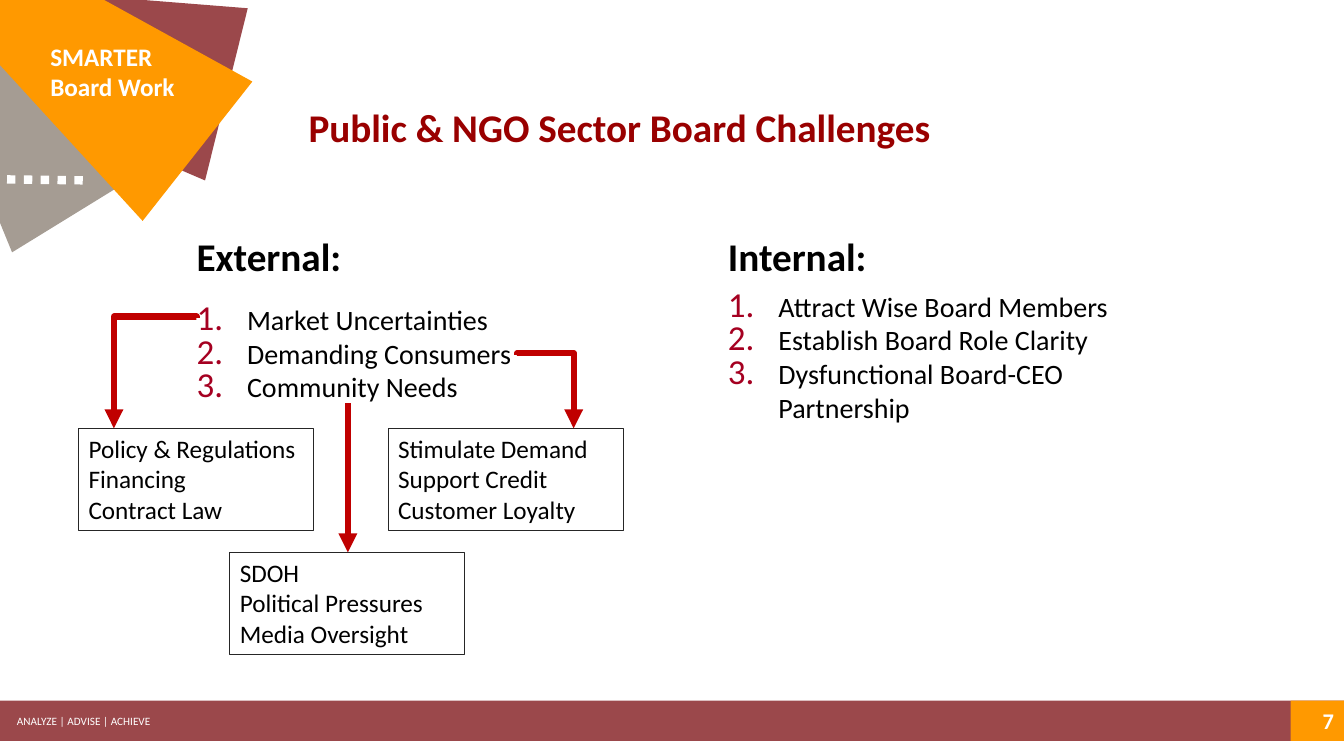
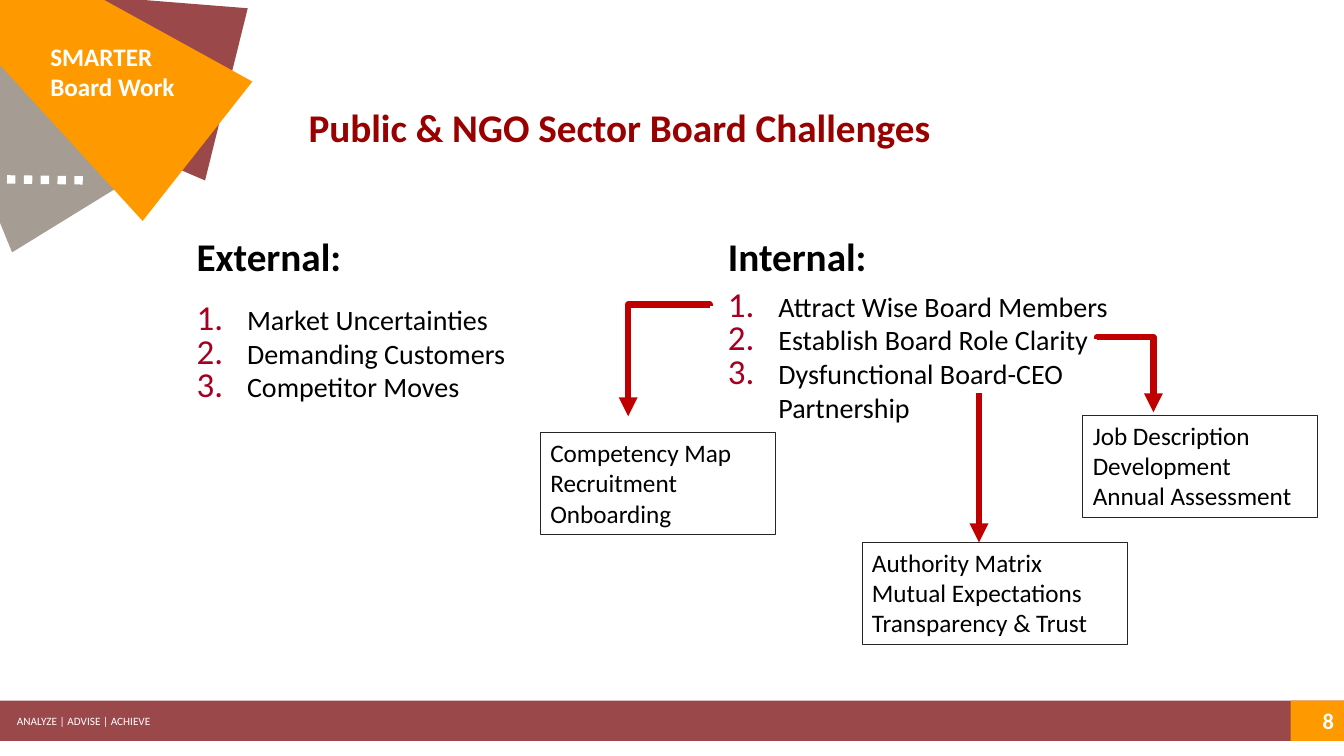
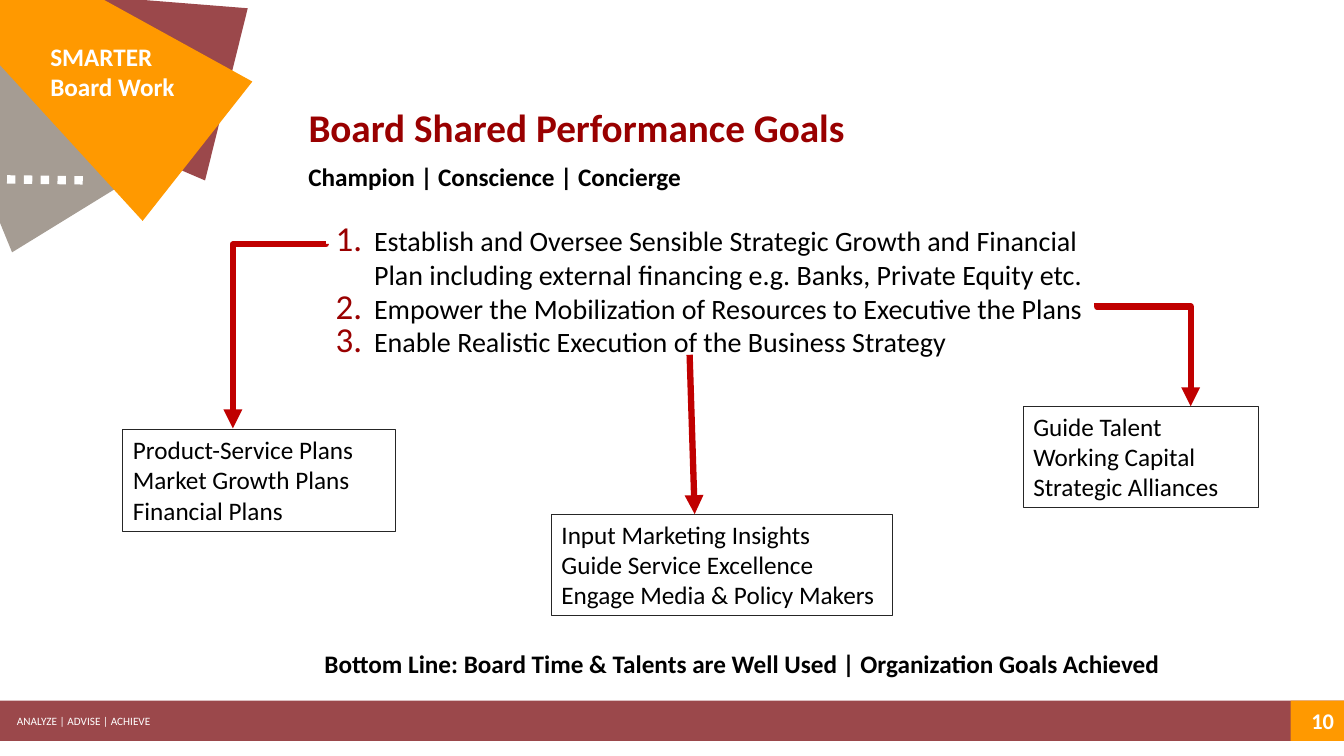
from lxml import etree
from pptx import Presentation
from pptx.dml.color import RGBColor
from pptx.enum.dml import MSO_LINE
from pptx.enum.shapes import MSO_CONNECTOR as CONNECTOR, MSO_SHAPE as SHAPE
from pptx.enum.text import MSO_ANCHOR as ANCHOR, MSO_AUTO_SIZE as AUTO_SIZE, PP_ALIGN as ALIGN
from pptx.oxml.ns import qn
from pptx.util import Inches, Pt

FONT = "Calibri"
WHITE = RGBColor(0xFF, 0xFF, 0xFF)
BLACK = RGBColor(0x00, 0x00, 0x00)
MAROON = RGBColor(0x9B, 0x48, 0x4B)
STONE = RGBColor(0xA5, 0x9C, 0x93)
ORANGE = RGBColor(0xFF, 0x99, 0x00)
TITLE_RED = RGBColor(0x99, 0x00, 0x00)
NUMBER_RED = RGBColor(0xA5, 0x00, 0x21)
ARROW_RED = RGBColor(0xC0, 0x00, 0x00)
CARD_EDGE = RGBColor(0x26, 0x26, 0x26)

COMPARISON_LAYOUT = 4
CONTENT_LAYOUT = 1
CARD_HEIGHT = 1.01
CHALLENGES = "Public & NGO Sector Board Challenges"
INTERNAL = ["Attract Wise Board Members", "Establish Board Role Clarity",
            "Dysfunctional Board-CEO Partnership"]


def place(box, left, top, width, height):
    box.left, box.top = Inches(left), Inches(top)
    box.width, box.height = Inches(width), Inches(height)


def write(box, lines, size, color=BLACK, bold=False, align=ALIGN.LEFT,
          anchor=ANCHOR.TOP, wrap=True):
    frame = box.text_frame
    frame.word_wrap = wrap
    frame.auto_size = AUTO_SIZE.NONE
    frame.vertical_anchor = anchor
    for index, line in enumerate(lines):
        para = frame.add_paragraph() if index else frame.paragraphs[0]
        para.alignment = align
        para.space_before = Pt(0)
        span = para.add_run()
        span.text = line
        span.font.name = FONT
        span.font.size = Pt(size)
        span.font.bold = bold
        span.font.color.rgb = color


def number(box, color, indent):
    for para in box.text_frame.paragraphs:
        props = para._p.get_or_add_pPr()
        props.set("marL", str(Inches(indent)))
        props.set("indent", str(-Inches(indent)))
        tint = etree.SubElement(props, qn("a:buClr"))
        etree.SubElement(tint, qn("a:srgbClr"), val=str(color))
        etree.SubElement(props, qn("a:buSzPct"), val="125000")
        etree.SubElement(props, qn("a:buFont"), typeface=FONT)
        etree.SubElement(props, qn("a:buAutoNum"), type="arabicPeriod")


def add_text(page, area, lines, size, **style):
    box = page.shapes.add_textbox(*map(Inches, area))
    write(box, lines, size, **style)
    return box


def add_block(page, kind, area, fill, rotation=0):
    block = page.shapes.add_shape(kind, *map(Inches, area))
    block.shadow.inherit = False
    block.fill.solid()
    block.fill.fore_color.rgb = fill
    block.line.fill.background()
    block.rotation = rotation
    return block


def add_card(page, left, top, lines, width=2.33):
    card = add_block(page, SHAPE.RECTANGLE, (left, top, width, CARD_HEIGHT), WHITE)
    card.line.color.rgb = CARD_EDGE
    card.line.width = Pt(0.75)
    write(card, lines, 18)


def add_line(page, kind, start, end, color, width):
    line = page.shapes.add_connector(kind, *map(Inches, start + end))
    line.line.color.rgb = color
    line.line.width = Pt(width)
    etree.SubElement(line._element.spPr, qn("a:effectLst"))
    return line


def add_arrow(page, start, end, kind=CONNECTOR.STRAIGHT):
    arrow = add_line(page, kind, start, end, ARROW_RED, 4.5)
    etree.SubElement(arrow.line._get_or_add_ln(), qn("a:tailEnd"), type="triangle")
    return arrow


def add_elbow(page, start, end, bend):
    (x1, y1), (x2, y2) = start, end
    goes_right = x2 > x1
    run, drop = abs(x2 - x1), y2 - y1
    left = (x1 + x2 - drop) / 2
    top = (y1 + y2 - run) / 2
    near, far = (left + drop, left) if goes_right else (left, left + drop)
    elbow = add_arrow(page, (near, top), (far, top + run), CONNECTOR.ELBOW)
    props = elbow._element.spPr
    props.find(qn("a:xfrm")).set("rot", str((270 if goes_right else 90) * 60000))
    geometry = props.find(qn("a:prstGeom"))
    guides = geometry.find(qn("a:avLst"))
    if guides is None:
        guides = etree.SubElement(geometry, qn("a:avLst"))
    etree.SubElement(guides, qn("a:gd"), name="adj1", fmla=f"val {round(bend * 1000)}")


def decorate_master(deck, page):
    decor = [add_block(page, SHAPE.RECTANGLE, (0, 6.95, 13.33, 0.4), MAROON)]
    for left, top, color, rotation in [(0.07, -0.72, MAROON, 283.9),
                                       (-0.71, -0.43, STONE, 328.4),
                                       (0.03, -0.66, ORANGE, 308.2)]:
        decor.append(add_block(page, SHAPE.TRAPEZOID, (left, top, 1.76, 2.67),
                               color, rotation))
    decor.append(add_text(page, (0.4, 0.36, 1.45, 0.71), ["SMARTER", "Board Work"],
                          18, color=WHITE, bold=True, wrap=False))
    dots = add_line(page, CONNECTOR.STRAIGHT, (0.07, 1.78), (0.89, 1.79), WHITE, 6)
    dots.line.dash_style = MSO_LINE.ROUND_DOT
    decor.append(dots)
    decor.append(add_text(page, (0.07, 7.04, 2.59, 0.24),
                          ["ANALYZE | ADVISE | ACHIEVE"], 8, color=WHITE))
    for piece in decor:
        deck.slide_master.shapes.element.append(piece.element)


def add_page(deck, layout, title, title_width, page_number):
    page = deck.slides.add_slide(deck.slide_layouts[layout])
    place(page.shapes.title, 2.96, 0.97, title_width, 0.57)
    write(page.shapes.title, [title], 28, color=TITLE_RED, bold=True, wrap=False)
    corner = add_block(page, SHAPE.RECTANGLE, (12.8, 6.95, 0.53, 0.4), ORANGE)
    write(corner, [page_number], 16, color=WHITE, bold=True, align=ALIGN.RIGHT,
          anchor=ANCHOR.MIDDLE)
    return page


def fill_list(box, area, items, color=NUMBER_RED, indent=0.5):
    place(box, *area)
    write(box, items, 20)
    number(box, color, indent)


def add_challenges(deck, page_number, external):
    page = add_page(deck, COMPARISON_LAYOUT, CHALLENGES, 6.44, page_number)
    columns = [("External:", 1.85, 2.95, 1.45, external),
               ("Internal:", 7.12, 2.82, 1.78, INTERNAL)]
    for column, (heading, left, top, height, items) in enumerate(columns):
        head, body = (page.placeholders[2 * column + step] for step in (1, 2))
        place(head, left, 2.25, 1.76, 0.57)
        write(head, [heading], 28, bold=True)
        fill_list(body, (left, top, 4.63, height), items)
    return page


def add_external(deck):
    page = add_challenges(deck, "7", ["Market Uncertainties", "Demanding Consumers",
                                      "Community Needs"])
    add_card(page, 0.78, 4.25, ["Policy & Regulations", "Financing", "Contract Law"])
    add_elbow(page, (1.95, 3.15), (1.13, 4.25), -0.8)
    add_card(page, 3.85, 4.25, ["Stimulate Demand", "Support Credit", "Customer Loyalty"])
    add_elbow(page, (5.13, 3.52), (5.69, 4.25), -2.1)
    add_card(page, 2.28, 5.48, ["SDOH", "Political Pressures", "Media Oversight"])
    add_arrow(page, (3.45, 4), (3.45, 5.48))
    return page


def add_internal(deck):
    page = add_challenges(deck, "8", ["Market Uncertainties", "Demanding Customers",
                                      "Competitor Moves"])
    add_card(page, 5.36, 4.29, ["Competency Map", "Recruitment", "Onboarding"])
    add_elbow(page, (7.04, 3.03), (6.23, 4.13), -0.8)
    add_card(page, 10.74, 4.12, ["Job Description", "Development", "Annual Assessment"])
    add_elbow(page, (10.88, 3.36), (11.44, 4.09), -2.1)
    add_card(page, 8.55, 5.38, ["Authority Matrix", "Mutual Expectations",
                                "Transparency & Trust"], 2.63)
    add_arrow(page, (9.71, 3.9), (9.71, 5.38))


def add_goals(deck):
    page = add_page(deck, CONTENT_LAYOUT, "Board Shared Performance Goals", 5.58, "10")
    fill_list(page.placeholders[1], (3.23, 2.17, 7.78, 1.45),
              ["Establish and Oversee Sensible Strategic Growth and Financial Plan "
               "including external financing e.g. Banks, Private Equity etc.",
               "Empower the Mobilization of Resources to Executive the Plans",
               "Enable Realistic Execution of the Business Strategy"],
              TITLE_RED, 0.38)
    add_card(page, 1.22, 4.26, ["Product-Service Plans", "Market Growth Plans",
                                "Financial Plans"], 2.7)
    add_elbow(page, (3.23, 2.42), (2.31, 4.25), 0.2)
    add_card(page, 10.15, 4.03, ["Guide Talent", "Working Capital", "Strategic Alliances"])
    add_elbow(page, (10.88, 3.01), (11.81, 4.03), 3.2)
    add_card(page, 5.47, 5.1, ["Input Marketing Insights", "Guide Service Excellence",
                               "Engage Media & Policy Makers"], 3.38)
    add_arrow(page, (6.84, 3.52), (6.89, 5.1))
    add_text(page, (3.12, 6.38, 8.96, 0.4),
             ["Bottom Line: Board Time & Talents are Well Used | "
              "Organization Goals Achieved"], 18, bold=True)
    add_text(page, (2.96, 1.55, 6.85, 0.4), ["Champion | Conscience | Concierge"],
             18, bold=True)


def main():
    deck = Presentation()
    deck.slide_width, deck.slide_height = Inches(13.33), Inches(7.5)
    decorate_master(deck, add_external(deck))
    add_internal(deck)
    add_goals(deck)
    deck.save("out.pptx")


if __name__ == "__main__":
    main()
